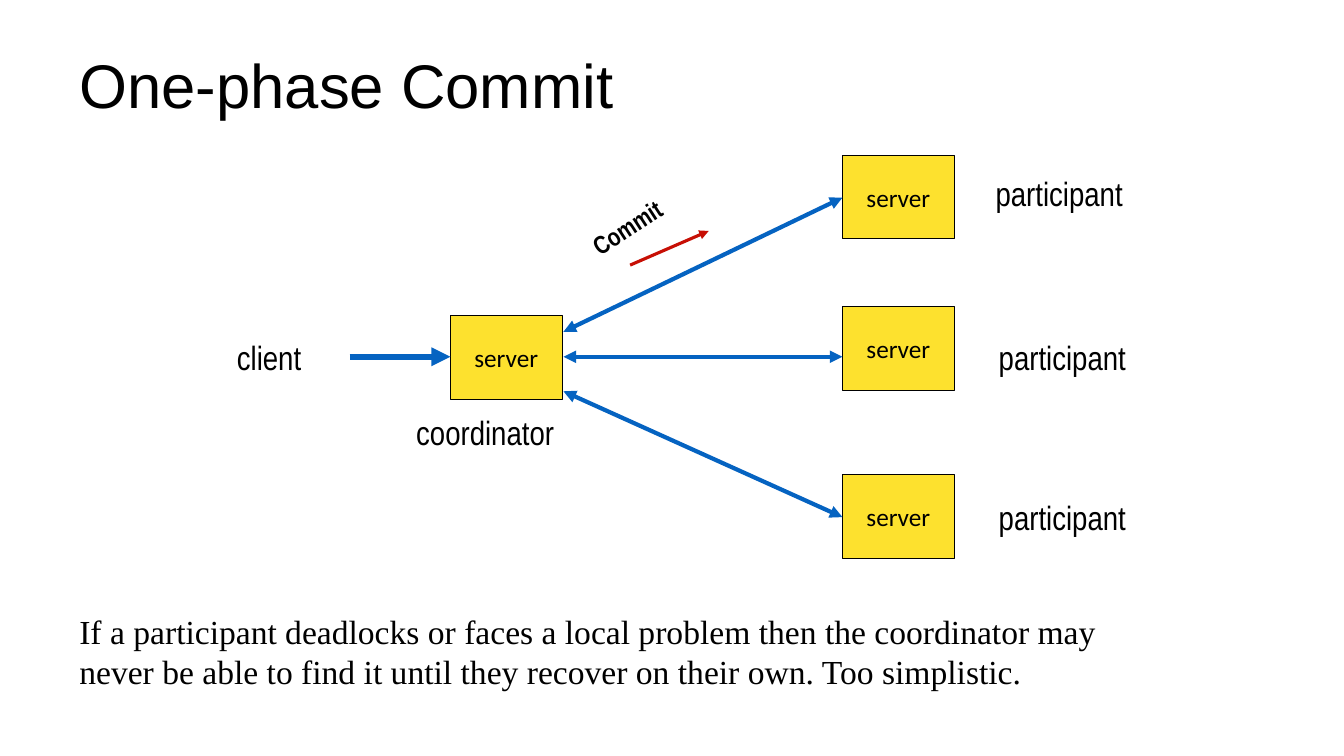
from pptx import Presentation
from pptx import util as u
from pptx.dml.color import RGBColor
from pptx.enum import shapes, text
from pptx.oxml.ns import qn
from lxml import etree

COLORS = {"ink": "000000", "box": "FDE12E", "link": "0563C1", "message": "C70F05"}
BOX_W, BOX_H = 2.82, 2.11
COORDINATOR_X, PARTICIPANT_X = 11.35, 21.23
LINK_X = 14.2
CLIENT_Y = 8.99

# box top, link start y, link end y, label left, label top
PARTICIPANTS = [
    (3.91, 8.36, 4.98, 24.84, 4.24),
    (7.72, CLIENT_Y, CLIENT_Y, 24.92, 8.36),
    (11.96, 9.86, 13.03, 24.92, 12.4),
]


def rgb(name):
    return RGBColor.from_string(COLORS[name])


def place(sp, x, y, w, h):
    sp.left, sp.top, sp.width, sp.height = (u.Cm(v) for v in (x, y, w, h))


def write(tf, content, size=24, font="Arial Narrow", bold=False, align=None,
          anchor=text.MSO_ANCHOR.TOP, wrap=False, spacing=None):
    tf.word_wrap = wrap
    tf.vertical_anchor = anchor
    p = tf.paragraphs[0]
    p.alignment = align
    p.line_spacing = spacing
    r = p.add_run()
    r.text = content
    r.font.size = u.Pt(size)
    r.font.name = font
    r.font.bold = bold
    r.font.color.rgb = rgb("ink")


def add_label(s, content, x, y, w, h=1.27, rotation=0, **fmt):
    sp = s.shapes.add_textbox(u.Cm(x), u.Cm(y), u.Cm(w), u.Cm(h))
    sp.rotation = rotation
    write(sp.text_frame, content, **fmt)
    sp.text_frame.auto_size = text.MSO_AUTO_SIZE.SHAPE_TO_FIT_TEXT


def add_server(s, x, y):
    sp = s.shapes.add_shape(shapes.MSO_SHAPE.RECTANGLE, u.Cm(x), u.Cm(y),
                            u.Cm(BOX_W), u.Cm(BOX_H))
    sp.shadow.inherit = False
    sp.fill.solid()
    sp.fill.fore_color.rgb = rgb("box")
    sp.line.color.rgb = rgb("ink")
    sp.line.width = u.Pt(0.75)
    write(sp.text_frame, "server", size=18, font="Calibri",
          align=text.PP_ALIGN.CENTER, anchor=text.MSO_ANCHOR.MIDDLE)


def add_arrow(s, x1, y1, x2, y2, width, color="link", ends=("tailEnd",)):
    sp = s.shapes.add_connector(shapes.MSO_CONNECTOR.STRAIGHT,
                                u.Cm(x1), u.Cm(y1), u.Cm(x2), u.Cm(y2))
    sp.line.color.rgb = rgb(color)
    sp.line.width = u.Pt(width)
    sp_pr = sp._element.spPr
    for end in ends:
        etree.SubElement(sp_pr.find(qn("a:ln")), qn("a:" + end), type="triangle")
    etree.SubElement(sp_pr, qn("a:effectLst"))


def main():
    prs = Presentation()
    prs.slide_width, prs.slide_height = u.Cm(33.87), u.Cm(19.05)
    s = prs.slides.add_slide(prs.slide_layouts[5])

    title = s.shapes.title
    place(title, 1.75, 0.38, 29.21, 3.68)
    write(title.text_frame, "One-phase Commit", size=44, font="Arial", wrap=True,
          align=text.PP_ALIGN.LEFT, anchor=text.MSO_ANCHOR.MIDDLE, spacing=0.9)

    add_label(s, "client", 5.72, 8.36, 2.16)
    add_server(s, COORDINATOR_X, 7.95)
    add_label(s, "coordinator", 10.24, 10.26, 4.04)
    add_arrow(s, 8.81, CLIENT_Y, COORDINATOR_X, CLIENT_Y, 4.5)

    for box_y, start_y, end_y, label_x, label_y in PARTICIPANTS:
        add_server(s, PARTICIPANT_X, box_y)
        add_arrow(s, LINK_X, start_y, PARTICIPANT_X, end_y, 3,
                  ends=("headEnd", "tailEnd"))
        add_label(s, "participant", label_x, label_y, 3.76)

    add_arrow(s, 15.88, 6.68, 17.86, 5.82, 2.25, color="message")
    add_label(s, "Commit", 14.58, 5.21, 2.46, 1.02, rotation=326.9, size=18, bold=True)
    add_label(s, "If a participant deadlocks or faces a local problem then the "
              "coordinator may never be able to find it until they recover on "
              "their own. Too simplistic.",
              1.75, 15.27, 26.24, 2.31, font="Times New Roman", wrap=True)

    prs.save("out.pptx")


if __name__ == "__main__":
    main()
